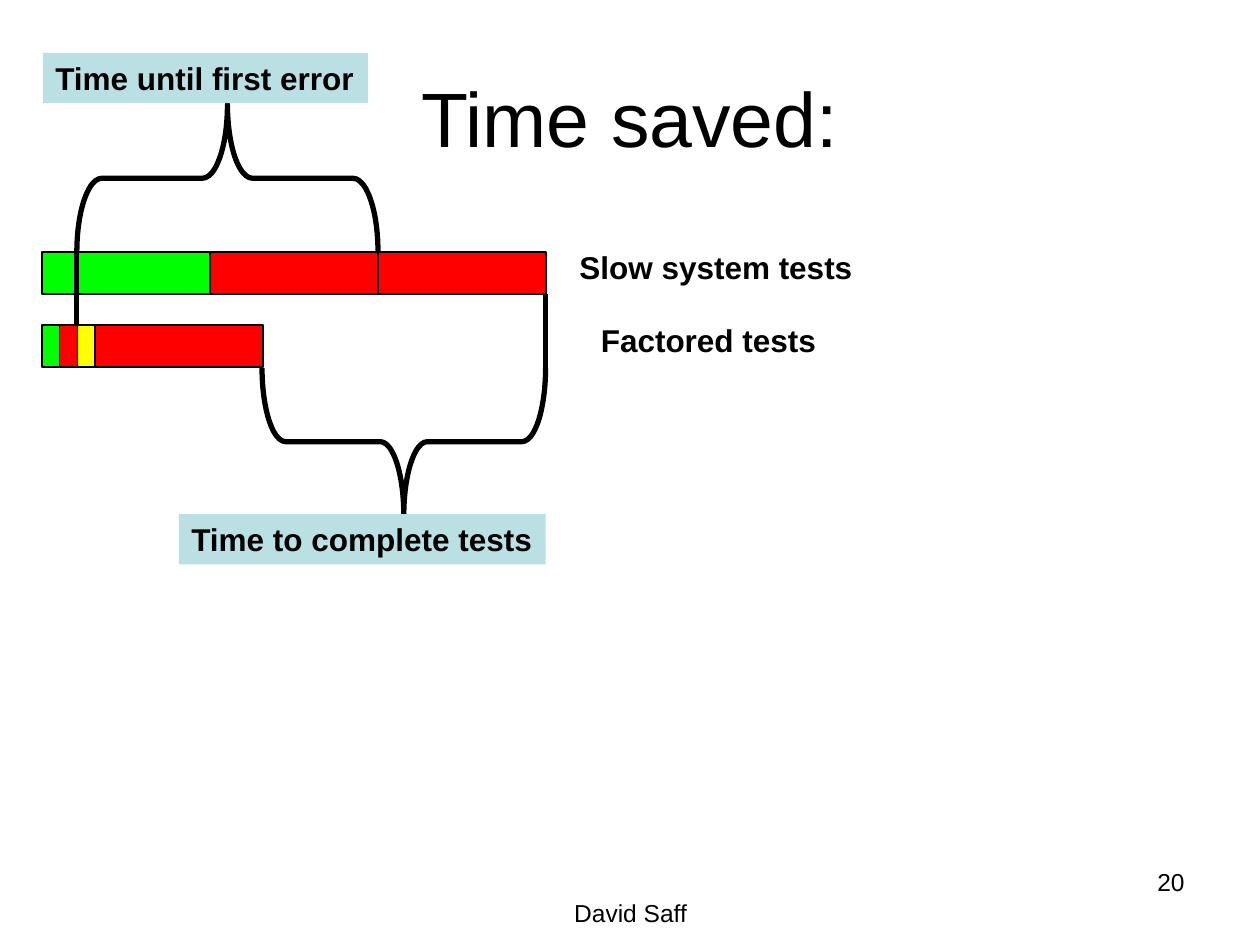
from dataclasses import dataclass

from pptx import Presentation
from pptx.dml.color import RGBColor
from pptx.enum.shapes import MSO_CONNECTOR, MSO_SHAPE
from pptx.enum.text import MSO_ANCHOR, PP_ALIGN
from pptx.oxml.ns import qn
from pptx.util import Inches, Pt
from lxml.etree import SubElement

BLACK = RGBColor(0, 0, 0)
RED = RGBColor(0xFF, 0, 0)
GREEN = RGBColor(0, 0xFF, 0)
YELLOW = RGBColor(0xFF, 0xFF, 0)
PALE_BLUE = RGBColor(0xBB, 0xE0, 0xE3)

BAR_LEFT = 1 / 3
BAR_HEIGHT = 1 / 3
LONG = 4 / 3
SHORT = 0.14


@dataclass
class TestRun:
    top: float
    segments: list[tuple[float, RGBColor]]


@dataclass
class Label:
    text: str
    left: float
    top: float
    width: float
    height: float = 0.4
    size: int = 18
    bold: bool = True
    align: PP_ALIGN = PP_ALIGN.LEFT
    fill: RGBColor | None = None


@dataclass
class Brace:
    left: float
    top: float
    width: float
    height: float
    rotation: int
    curve: float


@dataclass
class Drop:
    x: float
    top: float
    bottom: float


RUNS = [
    TestRun(2, [(LONG, GREEN), (LONG, RED), (LONG, RED)]),
    TestRun(2.58, [(SHORT, GREEN), (SHORT, RED), (SHORT, YELLOW), (LONG, RED)]),
]
BRACES = [
    Brace(0.61, 0.83, 2.39, 1.17, 90, 0.17),
    Brace(2.08, 2.92, 2.25, 1.17, 270, 0.16),
]
DROPS = [Drop(0.61, 2, 2.58), Drop(4.33, 2.33, 2.92)]
LABELS = [
    Label("Slow system tests", 4.5, 1.92, 2.37),
    Label("Factored tests", 4.67, 2.5, 1.91),
    Label("Time until first error", 0.34, 0.42, 2.58, fill=PALE_BLUE),
    Label("Time to complete tests", 1.42, 4.08, 2.91, fill=PALE_BLUE),
    Label("David Saff", 3.42, 7.08, 3.17, 0.27, 14, False, PP_ALIGN.CENTER),
    Label("20", 7.17, 6.83, 2.33, 0.52, 14, False, PP_ALIGN.RIGHT),
]


def set_line(s, points: float) -> None:
    s.line.color.rgb = BLACK
    s.line.width = Pt(points)


def draw_run(shapes, run: TestRun) -> None:
    left = BAR_LEFT
    for width, color in run.segments:
        s = shapes.add_shape(MSO_SHAPE.RECTANGLE, Inches(left), Inches(run.top),
                             Inches(width), Inches(BAR_HEIGHT))
        s.shadow.inherit = False
        s.fill.solid()
        s.fill.fore_color.rgb = color
        set_line(s, 0.75)
        left += width


def draw_brace(shapes, brace: Brace) -> None:
    """Draw a turned brace; its fields give the box it covers after turning."""
    left = brace.left + (brace.width - brace.height) / 2
    top = brace.top + (brace.height - brace.width) / 2
    s = shapes.add_shape(MSO_SHAPE.LEFT_BRACE, Inches(left), Inches(top),
                         Inches(brace.height), Inches(brace.width))
    s.rotation = brace.rotation
    s.adjustments[0] = brace.curve
    s.shadow.inherit = False
    s.fill.background()
    set_line(s, 3)


def draw_drop(shapes, drop: Drop) -> None:
    s = shapes.add_connector(MSO_CONNECTOR.STRAIGHT, Inches(drop.x), Inches(drop.bottom),
                             Inches(drop.x), Inches(drop.top))
    set_line(s, 3)
    SubElement(s._element.spPr, qn("a:effectLst"))


def draw_label(shapes, label: Label) -> None:
    box = [Inches(v) for v in (label.left, label.top, label.width, label.height)]
    if label.fill is None:
        s = shapes.add_textbox(*box)
    else:
        s = shapes.add_shape(MSO_SHAPE.RECTANGLE, *box)
        s.shadow.inherit = False
        s.fill.solid()
        s.fill.fore_color.rgb = label.fill
        s.line.fill.background()
    tf = s.text_frame
    tf.word_wrap = not label.bold
    tf.vertical_anchor = MSO_ANCHOR.TOP
    write(tf, label.text, label.size, label.bold, label.align)


def write(tf, text: str, size: int, bold: bool, align: PP_ALIGN) -> None:
    tf.text = text
    p = tf.paragraphs[0]
    p.alignment = align
    p.font.name = "Arial"
    p.font.size = Pt(size)
    p.font.bold = bold
    p.font.color.rgb = BLACK


def main() -> None:
    prs = Presentation()
    prs.slide_width, prs.slide_height = Inches(10), Inches(7.5)
    shapes = prs.slides.add_slide(prs.slide_layouts[5]).shapes

    title = shapes.title
    title.left, title.top = Inches(0.5), Inches(0.3)
    title.width, title.height = Inches(9), Inches(1.25)
    title.text_frame.vertical_anchor = MSO_ANCHOR.MIDDLE
    write(title.text_frame, "Time saved:", 44, False, PP_ALIGN.CENTER)

    for run in RUNS:
        draw_run(shapes, run)
    for brace in BRACES:
        draw_brace(shapes, brace)
    for drop in DROPS:
        draw_drop(shapes, drop)
    for label in LABELS:
        draw_label(shapes, label)
    prs.save("out.pptx")


if __name__ == "__main__":
    main()
